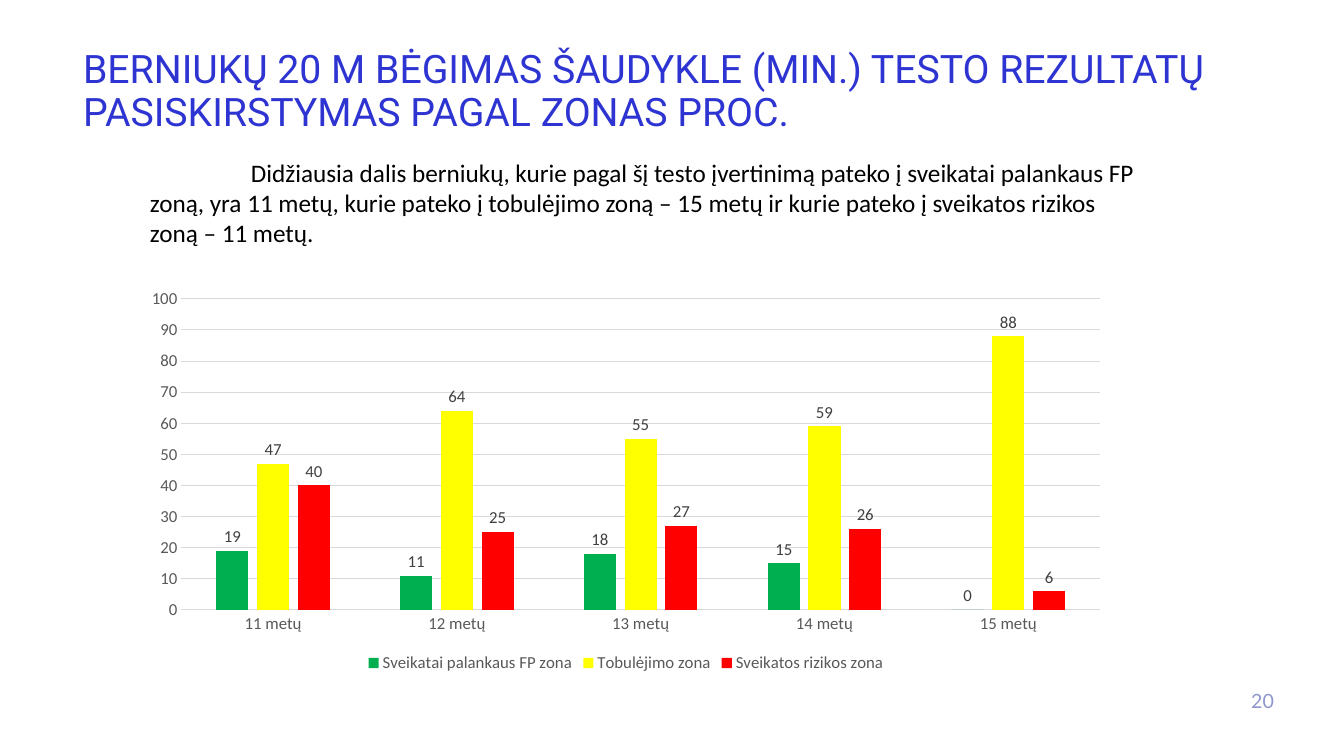
"""Build the slide on boys' 20 m shuttle run results by zone."""
from dataclasses import dataclass

import pptx
import pptx.chart.data
import pptx.dml.color
import pptx.enum.chart
import pptx.enum.text
import pptx.util

EMU_PER_PX = 914400 / 100.8
COLORS = {
    "title": "2E34D1", "number": "8E96CD", "text": "000000",
    "axis": "595959", "label": "404040", "grid": "D9D9D9",
    "green": "00B050", "yellow": "FFFF00", "red": "FF0000",
}
AGES = ["11 metų", "12 metų", "13 metų", "14 metų", "15 metų"]


@dataclass
class Zone:
    """One chart series."""
    name: str
    values: list[int]
    color: str


@dataclass
class Text:
    """A text with its box in px and its look."""
    text: str
    box: tuple[int, int, int, int]
    font: str
    size: int
    color: str
    align: pptx.enum.text.PP_ALIGN = pptx.enum.text.PP_ALIGN.LEFT
    line_spacing: float = 1.0
    indent: int = 0
    top_margin: int = 5


ZONES = [
    Zone("Sveikatai palankaus FP zona", [19, 11, 18, 15, 0], "green"),
    Zone("Tobulėjimo zona", [47, 64, 55, 59, 88], "yellow"),
    Zone("Sveikatos rizikos zona", [40, 25, 27, 26, 6], "red"),
]
TITLE = Text(
    "BERNIUKŲ 20 M BĖGIMAS ŠAUDYKLE (MIN.) TESTO REZULTATŲ "
    "PASISKIRSTYMAS PAGAL ZONAS PROC.",
    (73, 42, 1150, 139), "Roboto", 28, "title", line_spacing=0.9, top_margin=8)
SUMMARY = Text(
    "Didžiausia dalis berniukų, kurie pagal šį testo įvertinimą pateko į "
    "sveikatai palankaus FP zoną, yra 11 metų, kurie pateko į tobulėjimo zoną "
    "– 15 metų ir kurie pateko į sveikatos rizikos zoną – 11 metų.",
    (140, 152, 1013, 102), "Calibri", 18, "text", indent=101)
NUMBER = Text("20", (1232, 684, 52, 40), "Lato", 14, "number",
              align=pptx.enum.text.PP_ALIGN.RIGHT)
CHART_BOX = (132, 281, 988, 396)


def px(n: int) -> pptx.util.Emu:
    """Turn px into EMU."""
    return pptx.util.Emu(round(n * EMU_PER_PX))


def rgb(name: str) -> pptx.dml.color.RGBColor:
    """Look up a named colour."""
    return pptx.dml.color.RGBColor.from_string(COLORS[name])


def style_font(font, name: str, size: int, color: str) -> None:
    """Set face, size and colour of a font."""
    font.name = name
    font.size = pptx.util.Pt(size)
    font.color.rgb = rgb(color)


def fill_text(sp, item: Text) -> None:
    """Place a text shape and write its single paragraph."""
    sp.left, sp.top, sp.width, sp.height = map(px, item.box)
    tf = sp.text_frame
    tf.word_wrap = True
    tf.auto_size = pptx.enum.text.MSO_AUTO_SIZE.NONE
    tf.vertical_anchor = pptx.enum.text.MSO_ANCHOR.TOP
    tf.margin_top = px(item.top_margin)
    p = tf.paragraphs[0]
    p.alignment = item.align
    p.line_spacing = item.line_spacing
    if item.indent:
        pPr = p._p.get_or_add_pPr()
        pPr.set("marL", "0")
        pPr.set("indent", str(px(item.indent)))
    r = p.add_run()
    r.text = item.text
    style_font(r.font, item.font, item.size, item.color)


def style_line(line, color: str) -> None:
    """Give a chart line its thin colour."""
    line.color.rgb = rgb(color)
    line.width = pptx.util.Pt(0.75)


def add_zone_chart(slide) -> None:
    """Add the clustered columns of zones by age."""
    data = pptx.chart.data.CategoryChartData()
    data.categories = AGES
    for zone in ZONES:
        data.add_series(zone.name, zone.values)
    chart = slide.shapes.add_chart(
        pptx.enum.chart.XL_CHART_TYPE.COLUMN_CLUSTERED,
        *map(px, CHART_BOX), data).chart
    style_font(chart.font, "Calibri", 10, "text")
    chart.has_title = False
    chart.has_legend = True
    chart.legend.position = pptx.enum.chart.XL_LEGEND_POSITION.BOTTOM
    chart.legend.include_in_layout = False
    style_font(chart.legend.font, "Calibri", 12, "axis")

    for axis in (chart.category_axis, chart.value_axis):
        axis.major_tick_mark = pptx.enum.chart.XL_TICK_MARK.NONE
        axis.minor_tick_mark = pptx.enum.chart.XL_TICK_MARK.NONE
        style_font(axis.tick_labels.font, "Calibri", 12, "axis")
    style_line(chart.category_axis.format.line, "grid")
    values = chart.value_axis
    values.minimum_scale, values.maximum_scale, values.major_unit = 0, 100, 10
    values.format.line.fill.background()
    style_line(values.major_gridlines.format.line, "grid")

    plot = chart.plots[0]
    plot.gap_width = 219
    plot.overlap = -27
    plot.vary_by_categories = False
    for zone, series in zip(ZONES, plot.series):
        series.format.fill.solid()
        series.format.fill.fore_color.rgb = rgb(zone.color)
        labels = series.data_labels
        labels.show_value = True
        labels.position = pptx.enum.chart.XL_LABEL_POSITION.OUTSIDE_END
        style_font(labels.font, "Calibri", 12, "label")


def main() -> None:
    """Build and save the slide."""
    prs = pptx.Presentation()
    prs.slide_width, prs.slide_height = px(1344), px(756)
    slide = prs.slides.add_slide(prs.slide_layouts.get_by_name("Title Only"))
    fill_text(slide.shapes.title, TITLE)
    add_zone_chart(slide)
    for item in (SUMMARY, NUMBER):
        fill_text(slide.shapes.add_textbox(*map(px, item.box)), item)
    prs.save("out.pptx")


if __name__ == "__main__":
    main()
